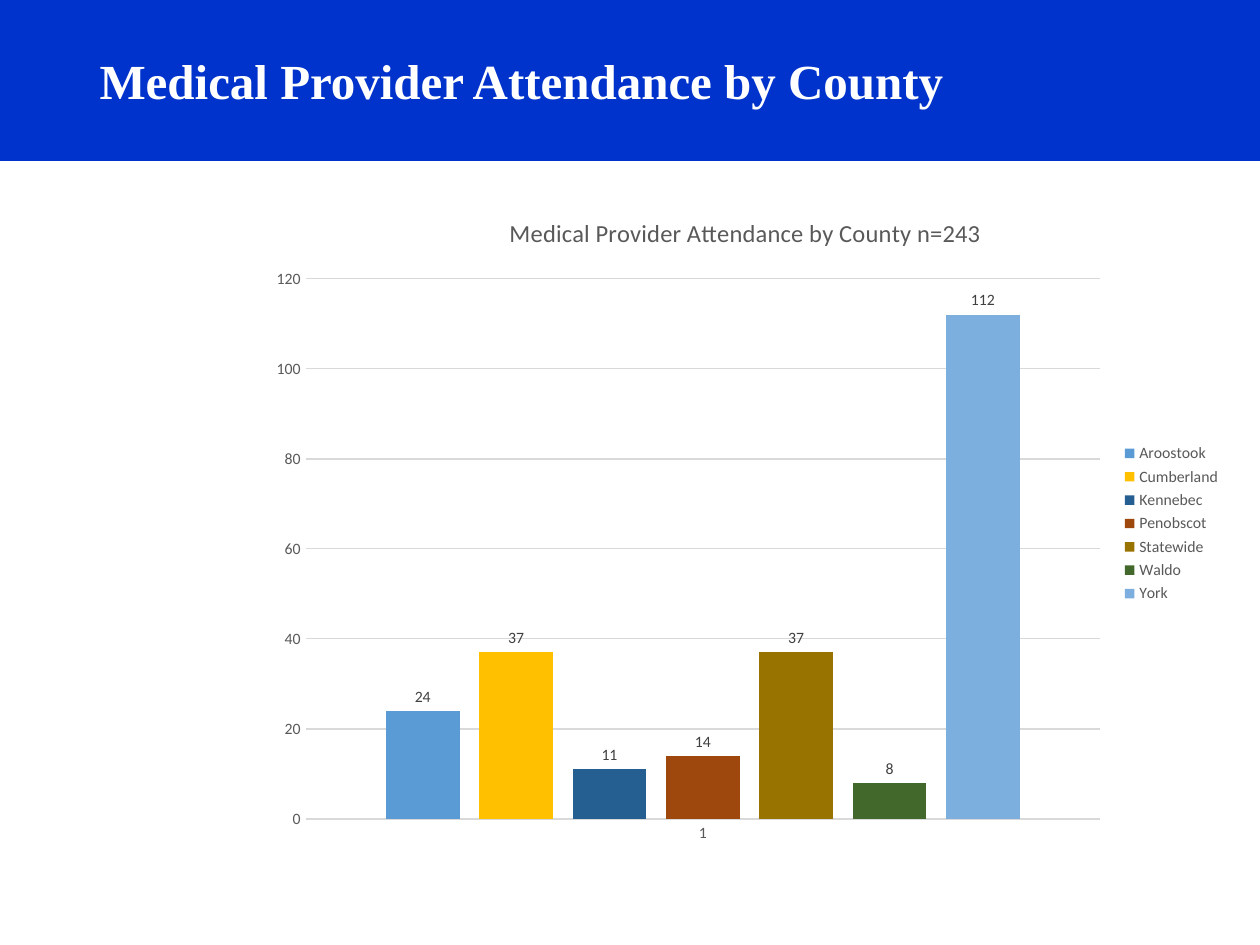
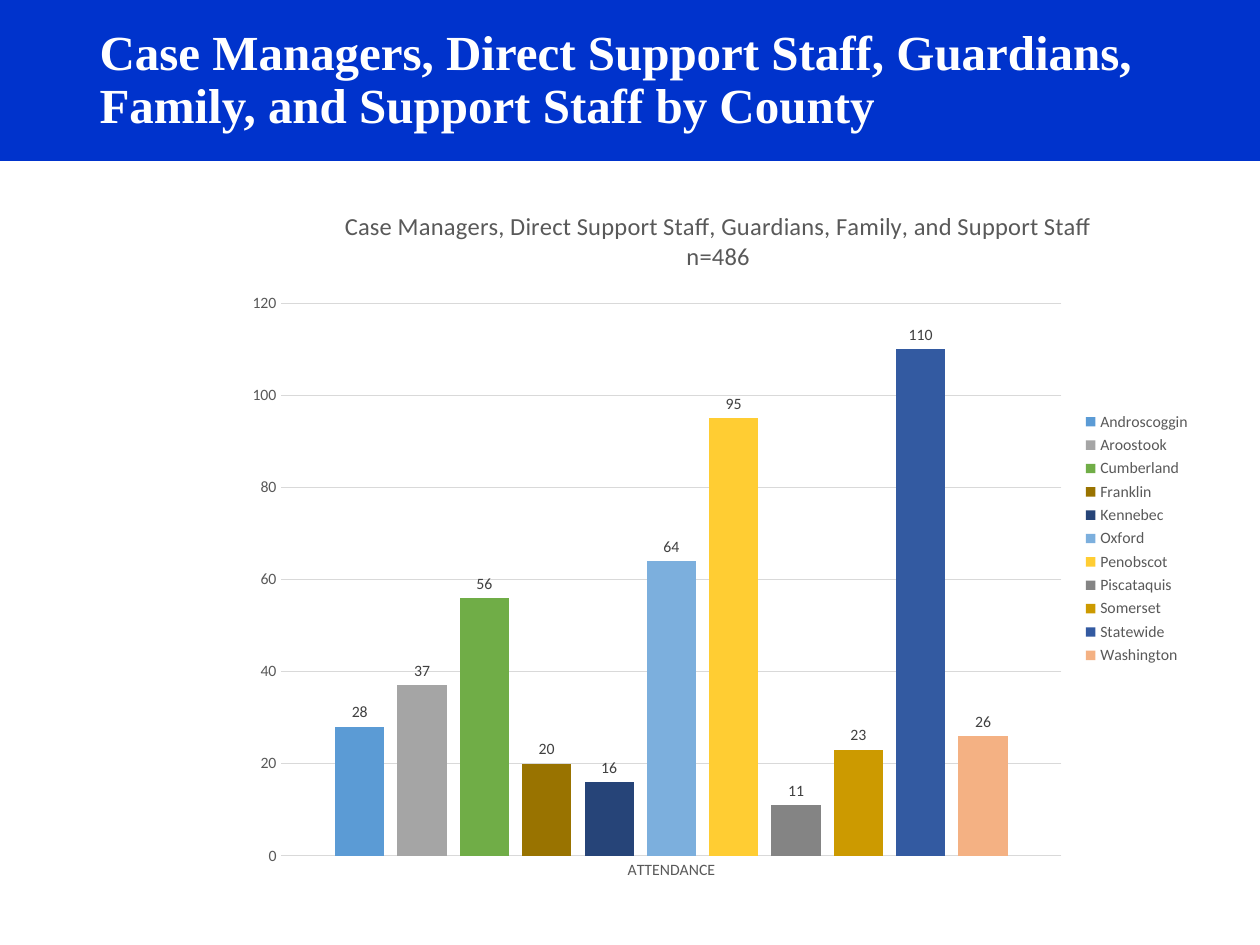
from pptx import Presentation
from pptx.chart.data import CategoryChartData
from pptx.dml.color import RGBColor
from pptx.enum.chart import XL_CHART_TYPE, XL_LABEL_POSITION, XL_LEGEND_POSITION, XL_TICK_MARK
from pptx.enum.shapes import MSO_SHAPE
from pptx.enum.text import MSO_ANCHOR, MSO_AUTO_SIZE, PP_ALIGN
from pptx.util import Inches, Pt

COLUMNS = XL_CHART_TYPE.COLUMN_CLUSTERED
ABOVE_COLUMN = XL_LABEL_POSITION.OUTSIDE_END
LEGEND_RIGHT = XL_LEGEND_POSITION.RIGHT
NO_TICK = XL_TICK_MARK.NONE
RECTANGLE = MSO_SHAPE.RECTANGLE
TOP = MSO_ANCHOR.TOP
FIXED_SIZE = MSO_AUTO_SIZE.NONE
LEFT = PP_ALIGN.LEFT
CENTER = PP_ALIGN.CENTER

SLIDE_WIDTH, SLIDE_HEIGHT = Inches(10), Inches(7.5)
BAND_SHARE = 0.17
TITLE_ONLY = 5
BAND_BLUE, WHITE, BLACK = "0033CC", "FFFFFF", "000000"
CHART_GRAY, LABEL_GRAY, GRID_GRAY = "595959", "404040", "D9D9D9"
TITLE_FONT, CHART_FONT = "Times New Roman", "Calibri"

PROVIDER_COUNTIES = [
    ("Aroostook", 24, "5B9BD5"),
    ("Cumberland", 37, "FFC000"),
    ("Kennebec", 11, "255E91"),
    ("Penobscot", 14, "9E480E"),
    ("Statewide", 37, "997300"),
    ("Waldo", 8, "43682B"),
    ("York", 112, "7CAFDD"),
]
SUPPORT_COUNTIES = [
    ("Androscoggin", 28, "5B9BD5"),
    ("Aroostook", 37, "A5A5A5"),
    ("Cumberland", 56, "70AD47"),
    ("Franklin", 20, "997300"),
    ("Kennebec", 16, "264478"),
    ("Oxford", 64, "7CAFDD"),
    ("Penobscot", 95, "FFCD33"),
    ("Piscataquis", 11, "848484"),
    ("Somerset", 23, "CC9A00"),
    ("Statewide", 110, "335AA1"),
    ("Washington", 26, "F4B183"),
]


def rgb(hex_string):
    """Turn a hex string into a colour."""
    return RGBColor.from_string(hex_string)


def inches(*lengths):
    """Turn lengths in inches into slide units."""
    return [Inches(length) for length in lengths]


def style_font(font, size, color, name=CHART_FONT, bold=False):
    """Set the look of a font."""
    font.size, font.name, font.bold = Pt(size), name, bold
    font.color.rgb = rgb(color)


def style_line(line, color, width):
    """Set the colour and width of a line."""
    line.color.rgb = rgb(color)
    line.width = Pt(width)


def write(frame, text, align=LEFT, spacing=None, **font_format):
    """Write one formatted paragraph into a text frame."""
    frame.text = text
    paragraph = frame.paragraphs[0]
    paragraph.alignment = align
    paragraph.line_spacing = spacing
    style_font(paragraph.runs[0].font, **font_format)


def add_band(slide):
    """Put the title band behind everything on the slide's layout."""
    band = slide.shapes.add_shape(
        RECTANGLE, 0, 0, SLIDE_WIDTH, int(SLIDE_HEIGHT * BAND_SHARE))
    band.shadow.inherit = False
    band.fill.solid()
    band.fill.fore_color.rgb = rgb(BAND_BLUE)
    style_line(band.line, BAND_BLUE, 1)
    slide.slide_layout.shapes.element.insert(2, band.element)


def set_title(slide, text, place):
    """Place and format the slide title."""
    title = slide.shapes.title
    title.left, title.top, title.width, title.height = inches(*place)
    frame = title.text_frame
    frame.word_wrap = True
    frame.auto_size = FIXED_SIZE
    frame.vertical_anchor = TOP
    write(frame, text, spacing=0.9, size=28, color=WHITE, name=TITLE_FONT, bold=True)


def style_axes(chart):
    """Format both axes and the grid lines."""
    categories, values = chart.category_axis, chart.value_axis
    for axis in (categories, values):
        axis.major_tick_mark = axis.minor_tick_mark = NO_TICK
        style_font(axis.tick_labels.font, 9, CHART_GRAY)
    style_line(categories.format.line, GRID_GRAY, 0.75)
    values.format.line.fill.background()
    values.minimum_scale, values.maximum_scale, values.major_unit = 0, 120, 20
    values.tick_labels.number_format = "0"
    values.tick_labels.number_format_is_linked = False
    style_line(values.major_gridlines.format.line, GRID_GRAY, 0.75)


def style_column(column, color):
    """Colour one county's column and show its value."""
    column.format.fill.solid()
    column.format.fill.fore_color.rgb = rgb(color)
    column.invert_if_negative = False
    labels = column.data_labels
    labels.show_value = True
    labels.position = ABOVE_COLUMN
    labels.number_format = "0"
    labels.number_format_is_linked = False
    style_font(labels.font, 9, LABEL_GRAY)


def add_county_chart(slide, heading, category, counties, place):
    """Add a column chart with one series for each county."""
    data = CategoryChartData(number_format="0")
    data.categories = [category]
    for county, attendance, _ in counties:
        data.add_series(county, [attendance])
    chart = slide.shapes.add_chart(COLUMNS, *inches(*place), data).chart
    style_font(chart.font, 10, BLACK)
    chart.has_title = True
    write(chart.chart_title.text_frame, heading, align=CENTER, size=14, color=CHART_GRAY)
    chart.chart_title.include_in_layout = False
    chart.has_legend = True
    chart.legend.position = LEGEND_RIGHT
    chart.legend.include_in_layout = False
    style_font(chart.legend.font, 9, CHART_GRAY)
    style_axes(chart)
    plot = chart.plots[0]
    plot.gap_width, plot.overlap, plot.vary_by_categories = 219, -27, False
    for column, (_, _, color) in zip(plot.series, counties):
        style_column(column, color)


def main():
    """Build the two attendance slides."""
    deck = Presentation()
    deck.slide_width, deck.slide_height = SLIDE_WIDTH, SLIDE_HEIGHT
    layout = deck.slide_layouts[TITLE_ONLY]

    providers = deck.slides.add_slide(layout)
    add_band(providers)
    set_title(providers, "Medical Provider Attendance by County", (0.69, 0.4, 8.62, 1.45))
    add_county_chart(providers, "Medical Provider Attendance by County n=243",
                     "1", PROVIDER_COUNTIES, (2.04, 1.52, 7.75, 5.27))

    support = deck.slides.add_slide(layout)
    groups = "Case Managers, Direct Support Staff, Guardians, Family, and Support Staff"
    set_title(support, f"{groups} by County", (0.69, 0.17, 9.31, 1.45))
    add_county_chart(support, f"{groups} n=486",
                     "ATTENDANCE", SUPPORT_COUNTIES, (1.85, 1.46, 7.7, 5.63))

    deck.save("out.pptx")


if __name__ == "__main__":
    main()
